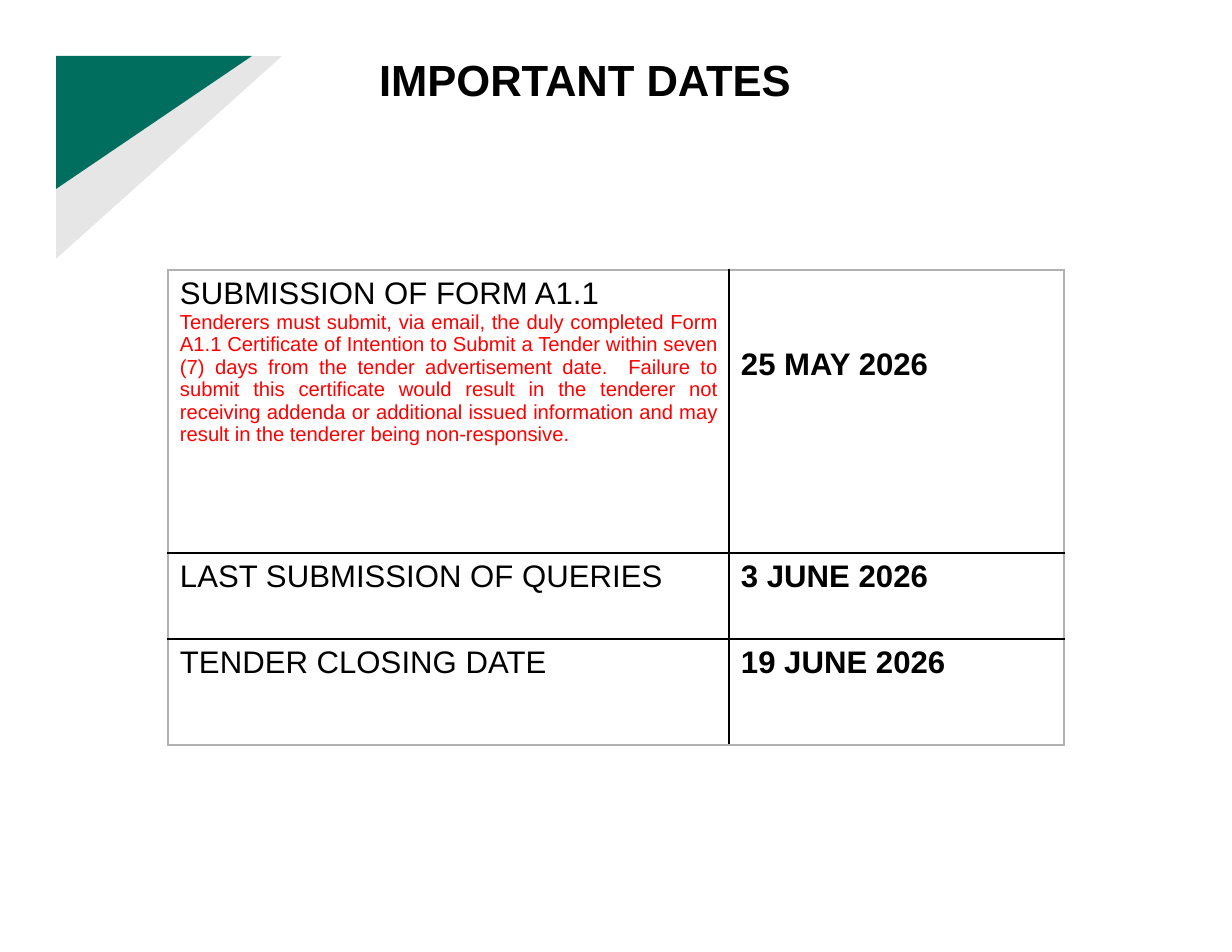
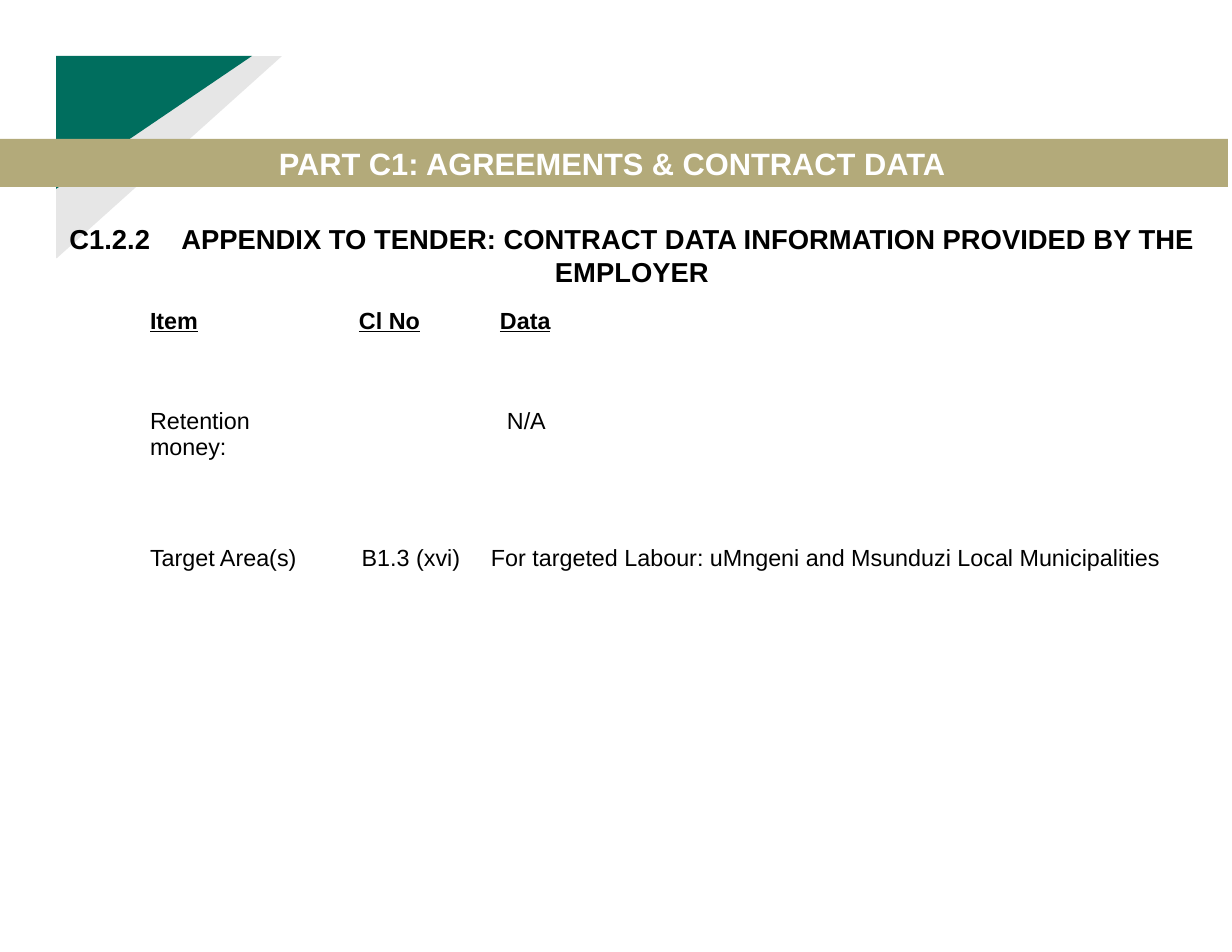
from dataclasses import dataclass

from lxml import etree
from pptx import Presentation
from pptx.dml.color import RGBColor
from pptx.enum.text import MSO_ANCHOR, MSO_AUTO_SIZE, PP_ALIGN
from pptx.oxml.ns import qn
from pptx.util import Pt

LEFT, CENTER, JUSTIFY = PP_ALIGN.LEFT, PP_ALIGN.CENTER, PP_ALIGN.JUSTIFY
MIDDLE = MSO_ANCHOR.MIDDLE
NO_AUTOFIT = MSO_AUTO_SIZE.NONE
PX = 8164


@dataclass(frozen=True)
class Theme:
    font: str = "Arial"
    black: str = "000000"
    white: str = "FFFFFF"
    red: str = "FF0000"
    green: str = "006E5E"
    pale: str = "E6E6E6"
    sand: str = "B3AA7A"
    frame: str = "B2B2B2"
    title: float = 28
    band: float = 19.8
    heading: float = 17.6
    date: float = 20
    note: float = 13
    data: float = 15


THEME = Theme()


def write(frame, lines, size, color=THEME.black, bold=False, underline=False, align=LEFT):
    frame.word_wrap = True
    frame.text = "\n".join(lines)
    for paragraph in frame.paragraphs:
        paragraph.alignment = align
        font = paragraph.font
        font.name, font.size = THEME.font, Pt(size)
        font.bold, font.underline = bold, underline
        font.color.rgb = RGBColor.from_string(color)


def add_grid(slide, left, top, widths, heights, inner, outer):
    table = slide.shapes.add_table(
        len(heights), len(widths), left * PX, top * PX, sum(widths) * PX, sum(heights) * PX
    ).table
    table.first_row = table.horz_banding = False
    for column, width in zip(table.columns, widths):
        column.width = width * PX
    for row, height in zip(table.rows, heights):
        row.height = height * PX
    for r in range(len(heights)):
        for c in range(len(widths)):
            cell = table.cell(r, c)
            cell.fill.background()
            properties = cell._tc.get_or_add_tcPr()
            edges = {
                "a:lnL": c == 0,
                "a:lnR": c == len(widths) - 1,
                "a:lnT": r == 0,
                "a:lnB": r == len(heights) - 1,
            }
            for position, (tag, is_outer) in enumerate(edges.items()):
                line = etree.Element(qn(tag), w=str(Pt(1)))
                fill = etree.SubElement(line, qn("a:solidFill"))
                etree.SubElement(fill, qn("a:srgbClr"), val=outer if is_outer else inner)
                properties.insert(position, line)
    return table


prs = Presentation()
prs.slide_width, prs.slide_height = 1232 * PX, 952 * PX
layout = prs.slide_layouts[5]
dates_slide = prs.slides.add_slide(layout)
contract_slide = prs.slides.add_slide(layout)

corner = [
    (THEME.pale, [(282, 56), (57, 258), (56, 258)]),
    (THEME.green, [(252, 56), (56, 189)]),
]
for color, points in corner:
    builder = dates_slide.shapes.build_freeform(56, 56, scale=PX)
    builder.add_line_segments(points, close=True)
    triangle = builder.convert_to_shape()
    triangle.shadow.inherit = False
    triangle.fill.solid()
    triangle.fill.fore_color.rgb = RGBColor.from_string(color)
    triangle.line.fill.background()
    layout.shapes.element.append(triangle.element)

titles = [
    (dates_slide, "IMPORTANT DATES", (368, 47, 495, 64), THEME.title, THEME.black, LEFT),
    (contract_slide, "PART C1: AGREEMENTS & CONTRACT DATA", (-4, 139, 1232, 48),
     THEME.band, THEME.white, CENTER),
]
for slide, words, box, size, color, align in titles:
    title = slide.shapes.title
    title.left, title.top, title.width, title.height = [n * PX for n in box]
    write(title.text_frame, [words], size, color, bold=True, align=align)
    title.text_frame.auto_size = NO_AUTOFIT
    title.text_frame.vertical_anchor = MIDDLE

band = contract_slide.shapes.title
band.fill.solid()
band.fill.fore_color.rgb = RGBColor.from_string(THEME.sand)

deadlines = [
    ("SUBMISSION OF FORM A1.1", "25 MAY 2026"),
    ("LAST SUBMISSION OF QUERIES", "3 JUNE 2026"),
    ("TENDER CLOSING DATE", "19 JUNE 2026"),
]
form_note = (
    "Tenderers must submit, via email, the duly completed Form A1.1 Certificate of "
    "Intention to Submit a Tender within seven (7) days from the tender advertisement "
    "date.  Failure to submit this certificate would result in the tenderer not "
    "receiving addenda or additional issued information and may result in the tenderer "
    "being non-responsive."
)
dates = add_grid(dates_slide, 168, 270, [561, 335], [283, 86, 106], THEME.black, THEME.frame)
for r, deadline in enumerate(deadlines):
    for c, words in enumerate(deadline):
        cell = dates.cell(r, c)
        cell.margin_left = cell.margin_right = 12 * PX
        cell.margin_top = cell.margin_bottom = 6 * PX
        write(cell.text_frame, [words], THEME.date, bold=c == 1)
dates.cell(0, 1).margin_top = 77 * PX

form_frame = dates.cell(0, 0).text_frame
note = form_frame.add_paragraph()
note.text = form_note
note.alignment = JUSTIFY
note.font.name, note.font.size = THEME.font, Pt(THEME.note)
note.font.color.rgb = RGBColor.from_string(THEME.red)

heading = contract_slide.shapes.add_textbox(36 * PX, 217 * PX, 1192 * PX, 77 * PX).text_frame
tabs = etree.SubElement(heading.paragraphs[0]._p.get_or_add_pPr(), qn("a:tabLst"))
etree.SubElement(tabs, qn("a:tab"), pos=str(123 * PX), algn="l")
write(
    heading,
    ["C1.2.2\tAPPENDIX TO TENDER: CONTRACT DATA INFORMATION PROVIDED BY THE EMPLOYER"],
    THEME.heading, bold=True, align=CENTER,
)

contract = add_grid(
    contract_slide, 141, 308, [209, 141, 721], [27, 72, 67, 70, 161], THEME.white, THEME.white
)
entries = [
    (0, 0, ["Item"], 9, 9, LEFT),
    (0, 1, ["Cl No"], 9, 9, LEFT),
    (0, 2, ["Data"], 9, 9, LEFT),
    (2, 0, ["Retention", "money:"], 9, 9, LEFT),
    (2, 2, ["N/A"], 16, 9, LEFT),
    (4, 0, ["Target Area(s)"], 9, 0, LEFT),
    (4, 1, ["B1.3 (xvi)"], 0, 19, CENTER),
    (4, 2, ["For targeted Labour: uMngeni and Msunduzi Local Municipalities"], 0, 0, LEFT),
]
for r, c, lines, left, right, align in entries:
    cell = contract.cell(r, c)
    cell.margin_left, cell.margin_right = left * PX, right * PX
    cell.margin_top = cell.margin_bottom = 0
    write(cell.text_frame, lines, THEME.data, bold=r == 0, underline=r == 0, align=align)

prs.save("out.pptx")
